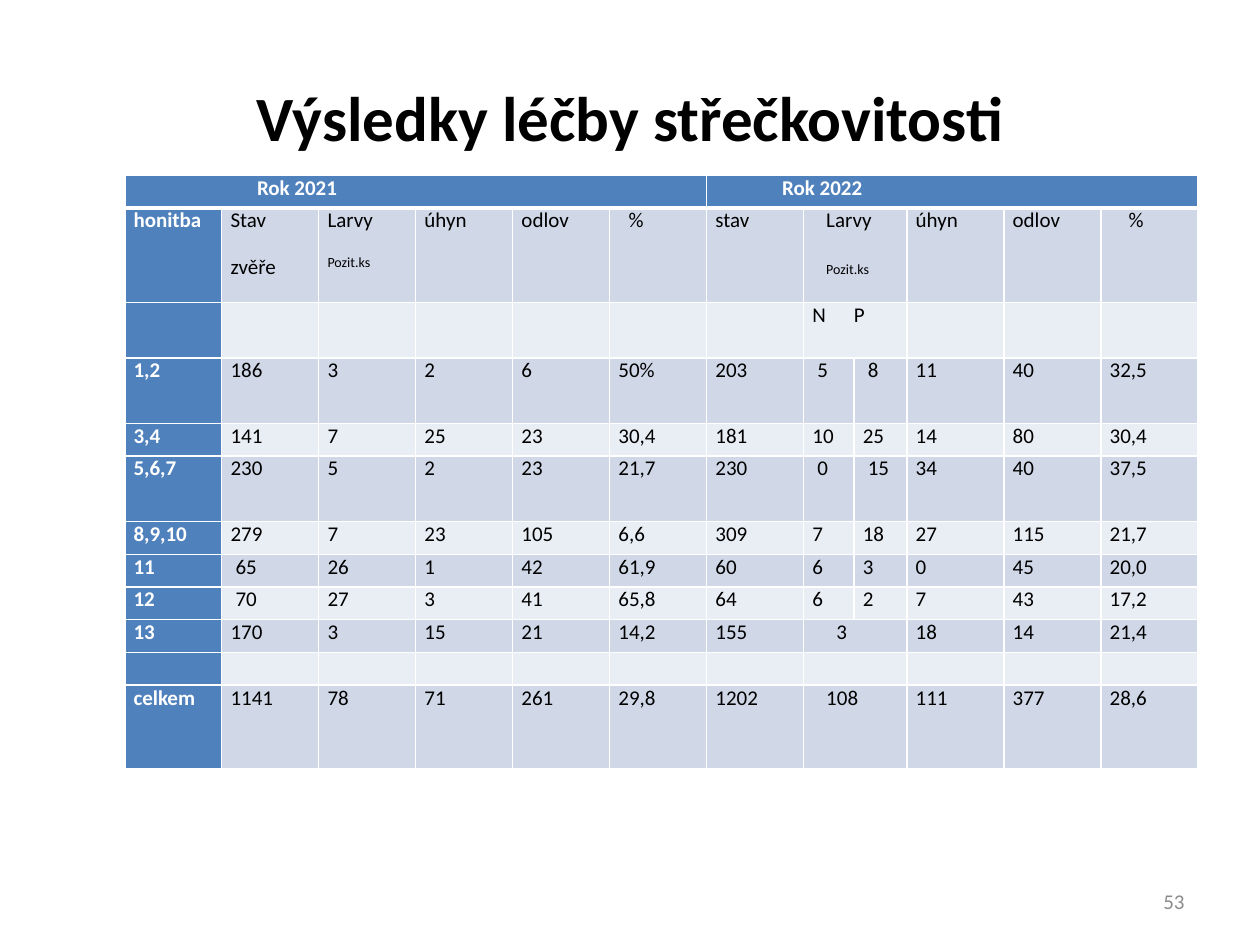
from dataclasses import dataclass
from itertools import product
from typing import Optional, Union

import pptx
import pptx.dml.color
import pptx.enum.text
import pptx.oxml
import pptx.oxml.ns
import pptx.util
from lxml import etree

Inches, Pt = pptx.util.Inches, pptx.util.Pt
Align, Anchor = pptx.enum.text.PP_ALIGN, pptx.enum.text.MSO_ANCHOR
qn = pptx.oxml.ns.qn


@dataclass(frozen=True)
class Theme:
    font: str = "Calibri"
    heading: str = "4F81BD"
    bands: tuple = ("E9EDF4", "D0D8E8")
    light: str = "FFFFFF"
    dark: str = "000000"
    muted: str = "8C8C8C"
    title_size: int = 36
    body_size: int = 12
    note_size: int = 8
    rule: int = 1
    heading_rule: int = 3


@dataclass(frozen=True)
class Entry:
    text: str
    indent: float = 0
    tab: Optional[float] = None
    note_gap: int = 0


THEME = Theme()
WIDTH, HEIGHT = 10, 7.5
COLUMN, ROW, INSET = 0.77, 0.26, 0.07
COLUMNS = [COLUMN] * 7 + [0.4, 0.42] + [COLUMN] * 3
ROWS = [ROW, 0.75, 0.44, 2 * ROW, ROW, 2 * ROW] + [ROW] * 5 + [0.66]
LARVAE = 7
NOTE = "Pozit.ks"

RESULTS: list[list[Union[str, Entry, None]]] = [
    [Entry("Rok 2021", 0.98)] + [None] * 5 + [Entry("Rok 2022", 0.53)] + [None] * 5,
    ["honitba", "Stav\nzvěře", f"Larvy\n{NOTE}", "úhyn", "odlov", Entry("%", 0.08),
     "stav", Entry(f"Larvy\n{NOTE}", 0.11, note_gap=4), None, "úhyn", "odlov", Entry("%", 0.15)],
    [""] * LARVAE + [Entry("N\tP", tab=0.33), None] + [""] * 3,
    ["1,2", "186", "3", "2", "6", "50%", "203", Entry("5", 0.04), Entry("8", 0.04), "11", "40", "32,5"],
    ["3,4", "141", "7", "25", "23", "30,4", "181", "10", "25", "14", "80", "30,4"],
    ["5,6,7", "230", "5", "2", "23", "21,7", "230", Entry("0", 0.04), Entry("15", 0.04), "34", "40", "37,5"],
    ["8,9,10", "279", "7", "23", "105", "6,6", "309", "7", "18", "27", "115", "21,7"],
    ["11", Entry("65", 0.04), "26", "1", "42", "61,9", "60", "6", "3", "0", "45", "20,0"],
    ["12", Entry("70", 0.04), "27", "3", "41", "65,8", "64", "6", "2", "7", "43", "17,2"],
    ["13", "170", "3", "15", "21", "14,2", "155", Entry("3", 0.19), None, "18", "14", "21,4"],
    [""] * (LARVAE + 1) + [None] + [""] * 3,
    ["celkem", "1141", "78", "71", "261", "29,8", "1202", Entry("108", 0.11), None, "111", "377", "28,6"],
]


def color(value: str) -> pptx.dml.color.RGBColor:
    return pptx.dml.color.RGBColor.from_string(value)


def style(paragraph, size: int, ink: str, bold: bool = False) -> None:
    font = paragraph.font
    font.name, font.size, font.bold = THEME.font, Pt(size), bold
    font.color.rgb = color(ink)


def place(shape, left: float, top: float, width: float, height: float) -> None:
    shape.left, shape.width = Inches(WIDTH * left), Inches(WIDTH * width)
    shape.top, shape.height = Inches(HEIGHT * top), Inches(HEIGHT * height)


def draw_borders(cell, row: int) -> None:
    properties = cell._tc.get_or_add_tcPr()
    for side in "LRTB":
        beside_heading = (row, side) in ((0, "B"), (1, "T"))
        weight = THEME.heading_rule if beside_heading else THEME.rule
        line = etree.SubElement(properties, qn(f"a:ln{side}"), w=str(Pt(weight)))
        fill = etree.SubElement(line, qn("a:solidFill"))
        etree.SubElement(fill, qn("a:srgbClr"), val=THEME.light)


def fill_cell(cell, entry: Entry, row: int, column: int) -> None:
    heading = row == 0 or column == 0
    draw_borders(cell, row)
    cell.fill.solid()
    cell.fill.fore_color.rgb = color(THEME.heading if heading else THEME.bands[row % 2])
    cell.margin_left = cell.margin_right = Inches(INSET)
    cell.margin_top = cell.margin_bottom = 0
    cell.vertical_anchor = Anchor.TOP
    cell.text_frame.text = entry.text
    for paragraph in cell.text_frame.paragraphs:
        note = paragraph.text == NOTE
        paragraph.alignment = Align.JUSTIFY
        paragraph.space_after = Pt(THEME.body_size)
        properties = paragraph._p.get_or_add_pPr()
        if entry.indent:
            properties.set("marL", str(Inches(entry.indent)))
            properties.set("indent", "0")
        if note and entry.note_gap:
            paragraph.space_before = Pt(entry.note_gap)
        if entry.tab:
            tabs = etree.SubElement(properties, qn("a:tabLst"))
            etree.SubElement(tabs, qn("a:tab"), pos=str(Inches(entry.tab)), algn="l")
        style(paragraph, THEME.note_size if note else THEME.body_size,
              THEME.light if heading else THEME.dark, heading)
        if not paragraph.text:
            etree.SubElement(paragraph._p, qn("a:endParaRPr"), sz=str(THEME.body_size * 100))


def draw_results(slide) -> None:
    table = slide.shapes.add_table(
        len(ROWS), len(COLUMNS), Inches(0.99), Inches(1.39),
        Inches(sum(COLUMNS)), Inches(sum(ROWS))).table
    for column, width in zip(table.columns, COLUMNS):
        column.width = Inches(width)
    for row, height in zip(table.rows, ROWS):
        row.height = Inches(height)
    for row, column in product(range(len(ROWS)), range(len(COLUMNS))):
        value = RESULTS[row][column]
        entry = value if isinstance(value, Entry) else Entry(value or "")
        fill_cell(table.cell(row, column), entry, row, column)
    for row, values in enumerate(RESULTS):
        starts = [index for index, value in enumerate(values) if value is not None]
        for start, following in zip(starts, starts[1:] + [len(values)]):
            if following - start > 1:
                table.cell(row, start).merge(table.cell(row, following - 1))


def draw_title(slide) -> None:
    title = slide.shapes.title
    place(title, 0.05, 0.04, 0.9, 1 / 6)
    title.text_frame.text = "Výsledky léčby střečkovitosti"
    title.text_frame.vertical_anchor = Anchor.MIDDLE
    heading = title.text_frame.paragraphs[0]
    heading.alignment = Align.CENTER
    style(heading, THEME.title_size, THEME.dark, True)


def draw_page_number(slide) -> None:
    page = slide.shapes.add_textbox(0, 0, 0, 0)
    place(page, 0.717, 0.927, 0.233, 0.053)
    page.text_frame.word_wrap = True
    page.text_frame.vertical_anchor = Anchor.MIDDLE
    page.text_frame.text = "53"
    number = page.text_frame.paragraphs[0]
    number.alignment = Align.RIGHT
    style(number, THEME.body_size, THEME.muted)


def main() -> None:
    presentation = pptx.Presentation()
    presentation.slide_width, presentation.slide_height = Inches(WIDTH), Inches(HEIGHT)
    slide = presentation.slides.add_slide(presentation.slide_layouts[5])
    draw_title(slide)
    draw_results(slide)
    draw_page_number(slide)
    presentation.save("out.pptx")


if __name__ == "__main__":
    main()
